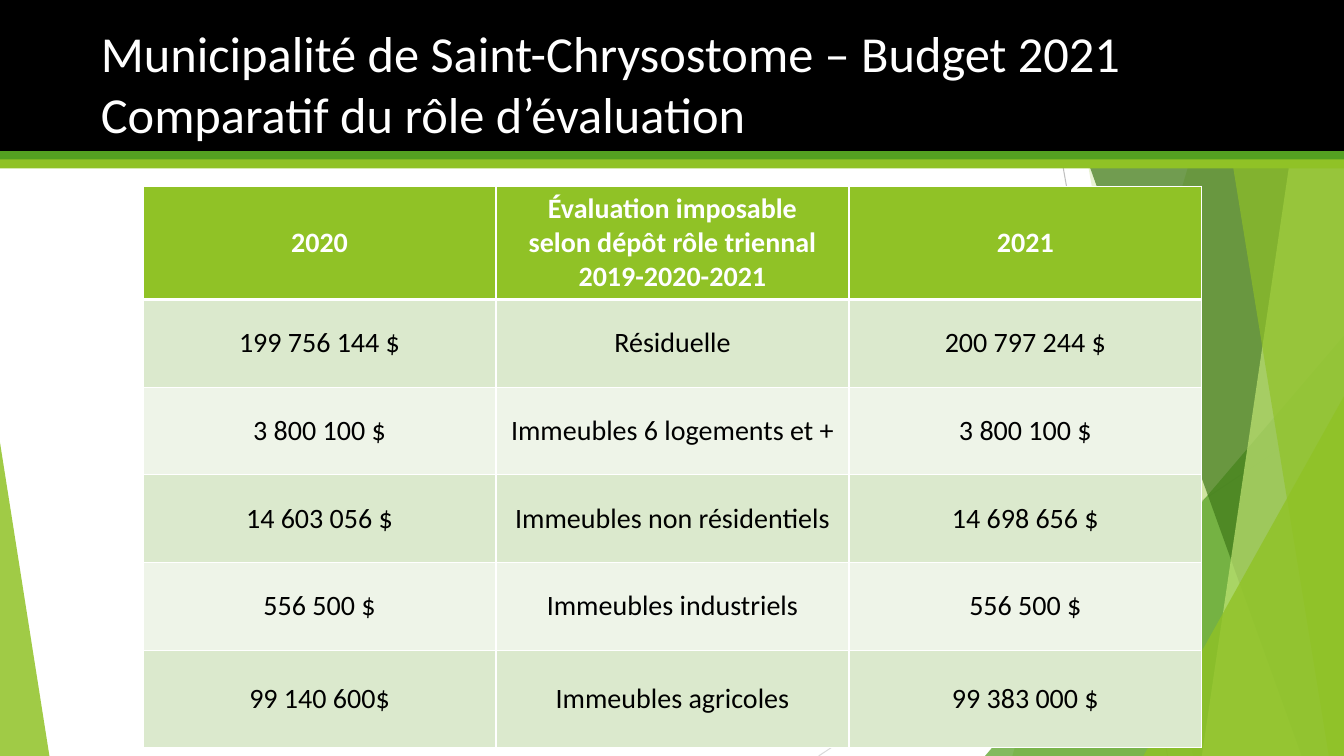
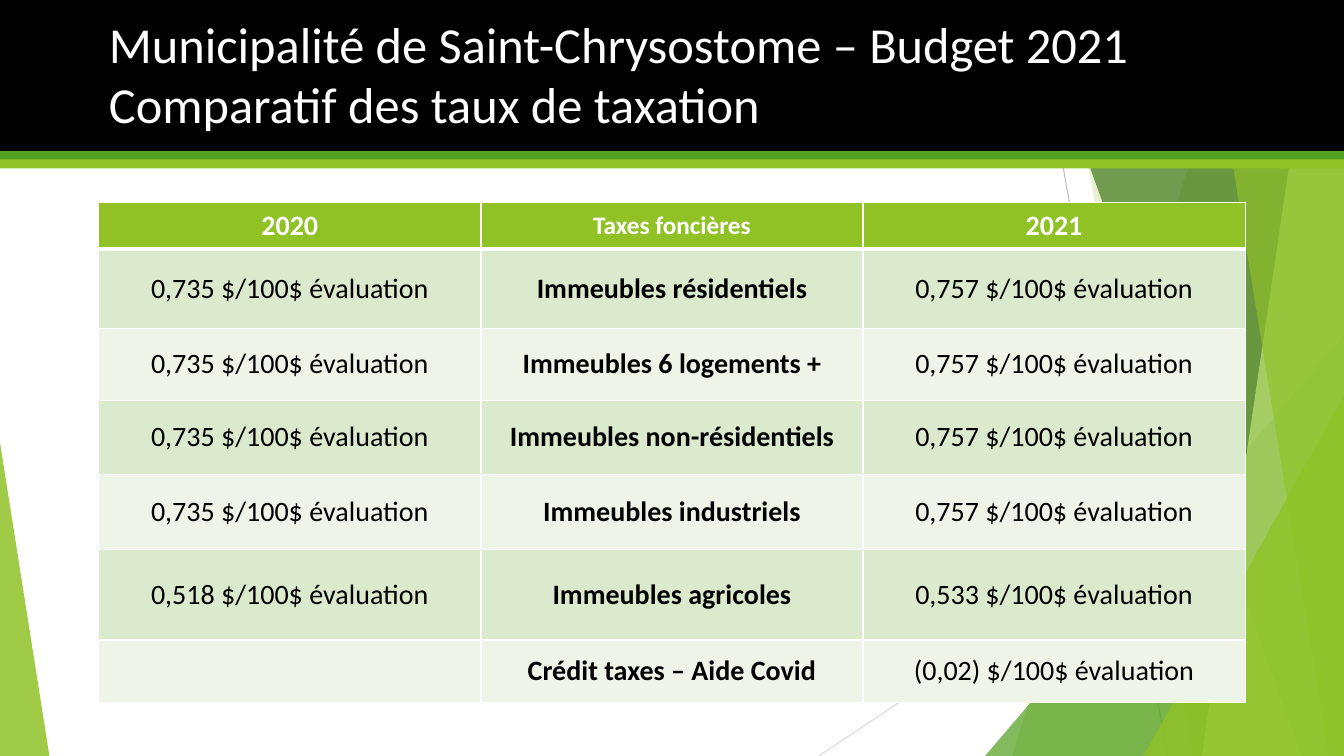
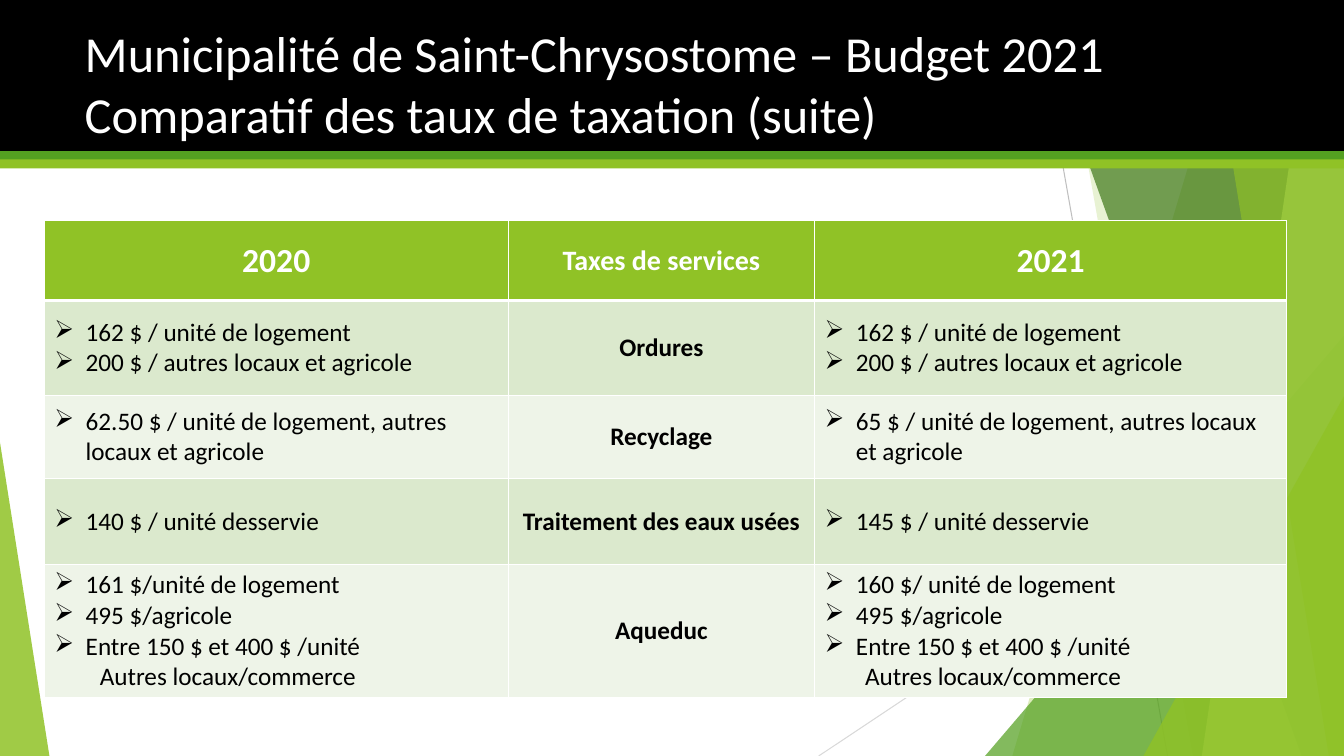
from lxml.etree import SubElement
from pptx import Presentation
from pptx.dml.color import RGBColor
from pptx.enum.shapes import MSO_CONNECTOR as Connector, MSO_SHAPE as Preset
from pptx.enum.text import MSO_ANCHOR as Anchor, MSO_AUTO_SIZE as AutoSize, PP_ALIGN as Align
from pptx.oxml.ns import qn
from pptx.util import Inches, Pt

WIDTH, HEIGHT = 13.33, 7.5
BLACK, WHITE = "000000", "FFFFFF"
LIME, GREEN, FOREST, PALE = "90C226", "54A021", "3F7819", "C0E474"
BANDS = ("EEF4E8", "DBE9CD")
TOWN = "Municipalité de Saint-Chrysostome – Budget 2021"


def color(code):
    return RGBColor.from_string(code)


class Deck:
    font = "Calibri"
    title_size = 36
    bullet_indent = 0.31

    def __init__(self):
        self.deck = Presentation()
        self.deck.slide_width, self.deck.slide_height = Inches(WIDTH), Inches(HEIGHT)
        self.layout = self.deck.slide_layouts[5]
        for holder in list(self.layout.placeholders)[1:]:
            holder.element.getparent().remove(holder.element)
        self.page = None

    def add_page(self):
        self.page = self.deck.slides.add_slide(self.layout)
        if len(self.deck.slides) == 1:
            self.backdrop()

    def paint(self, shape, fill, opacity=100):
        shape.shadow.inherit = False
        shape.fill.solid()
        shape.fill.fore_color.rgb = color(fill)
        if opacity < 100:
            tint = shape.element.spPr.find(".//" + qn("a:srgbClr"))
            SubElement(tint, qn("a:alpha")).set("val", str(opacity * 1000))
        shape.line.fill.background()

    def line(self, start, end, tone):
        points = [Inches(value) for value in (*start, *end)]
        link = self.page.shapes.add_connector(Connector.STRAIGHT, *points)
        link.line.color.rgb = color(tone)
        link.line.width = Pt(0.75)
        SubElement(link.element.spPr, qn("a:effectLst"))

    def shard(self, top_left, bottom_left, fill, opacity):
        corners = [(top_left, -0.01), (WIDTH, -0.01), (WIDTH, HEIGHT), (bottom_left, HEIGHT)]
        points = [(Inches(x), Inches(y)) for x, y in corners]
        builder = self.page.shapes.build_freeform(*points[0])
        builder.add_line_segments(points[1:], close=True)
        self.paint(builder.convert_to_shape(), fill, opacity)

    def triangle(self, left, top, width, peak, fill, opacity):
        area = [Inches(value) for value in (left, top, width, HEIGHT - top)]
        shape = self.page.shapes.add_shape(Preset.ISOSCELES_TRIANGLE, *area)
        shape.adjustments[0] = peak
        self.paint(shape, fill, opacity)

    def band(self, top, height, fill):
        area = [Inches(value) for value in (0, top, WIDTH, height)]
        self.paint(self.page.shapes.add_shape(Preset.RECTANGLE, *area), fill)

    def backdrop(self):
        self.line((10.25, 0), (11.58, HEIGHT), "BFBFBF")
        self.line((WIDTH, 4.03), (8.12, HEIGHT), "D9D9D9")
        self.shard(12.28, 10.04, LIME, 30)
        self.shard(10.5, 11.83, LIME, 20)
        self.triangle(9.77, 3.33, 3.56, 1, GREEN, 72)
        self.shard(10.21, 12.91, FOREST, 70)
        self.shard(13.03, 11.92, PALE, 70)
        self.shard(11.96, 13.18, LIME, 65)
        self.triangle(11.34, 3.93, 1.99, 1, LIME, 80)
        self.triangle(0, 4.39, 0.49, 0, LIME, 85)
        self.band(0, 1.5, BLACK)
        self.band(1.5, 0.09, GREEN)
        self.band(1.58, 0.09, LIME)
        layout_title = self.layout.placeholders[0].element
        for shape in list(self.page.shapes):
            if not shape.is_placeholder:
                layout_title.addprevious(shape.element)

    def add_text(self, para, text, size, tone, bold=False):
        span = para.add_run()
        span.text = text
        span.font.name = self.font
        span.font.size = Pt(size)
        span.font.bold = bold
        span.font.color.rgb = color(tone)

    def title(self, left, top, width, *lines):
        box = self.page.shapes.title
        box.left, box.top = Inches(left), Inches(top)
        box.width, box.height = Inches(width), Inches(1.44)
        frame = box.text_frame
        frame.word_wrap = True
        frame.auto_size = AutoSize.NONE
        frame.vertical_anchor = Anchor.TOP
        para = frame.paragraphs[0]
        para.alignment = Align.LEFT
        for number, text in enumerate(lines):
            if number:
                para.add_line_break()
            self.add_text(para, text, self.title_size, WHITE)

    def indent(self, para, left, bullet=False):
        props = para._p.get_or_add_pPr()
        props.set("marL", str(Inches(left)))
        props.set("indent", str(-Inches(left) if bullet else 0))
        if bullet:
            SubElement(props, qn("a:buChar")).set("char", "➢")

    def borders(self, cell, top, bottom):
        props = cell._tc.get_or_add_tcPr()
        for side, width in (("L", 1), ("R", 1), ("T", top), ("B", bottom)):
            edge = SubElement(props, qn("a:ln" + side), w=str(Pt(width)))
            fill = SubElement(edge, qn("a:solidFill"))
            SubElement(fill, qn("a:srgbClr")).set("val", WHITE)

    def fill_cell(self, cell, content, size, tone, bold):
        bulleted = isinstance(content, list)
        items = content if bulleted else content.split("\n")
        frame = cell.text_frame
        for number, item in enumerate(items):
            para = frame.add_paragraph() if number else frame.paragraphs[0]
            para.alignment = Align.LEFT if bulleted else Align.CENTER
            if isinstance(item, tuple):
                item, left = item
                self.indent(para, left)
            elif bulleted:
                self.indent(para, self.bullet_indent, bullet=True)
            if item:
                self.add_text(para, item, size, tone, bold)

    def table(self, left, top, widths, heights, rows, head_sizes, size, bold_middle=True):
        area = [Inches(value) for value in (left, top, sum(widths), sum(heights))]
        grid = self.page.shapes.add_table(len(rows), len(widths), *area).table
        for column, width in zip(grid.columns, widths):
            column.width = Inches(width)
        for row, height in zip(grid.rows, heights):
            row.height = Inches(height)
        for r, row in enumerate(rows):
            head = r == 0
            for c, content in enumerate(row):
                cell = grid.cell(r, c)
                self.borders(cell, 3 if r == 1 else 1, 3 if head else 1)
                cell.fill.solid()
                cell.fill.fore_color.rgb = color(LIME if head else BANDS[r % 2])
                cell.vertical_anchor = Anchor.MIDDLE
                self.fill_cell(cell, content, head_sizes[c] if head else size,
                               WHITE if head else BLACK, head or (bold_middle and c == 1))


def assessment(deck):
    deck.add_page()
    deck.title(0.9, 0.17, 11.18, TOWN, "Comparatif du rôle d’évaluation")
    rows = [
        ("2020", "Évaluation imposable\nselon dépôt rôle triennal\n2019-2020-2021", "2021"),
        ("199 756 144 $", "Résiduelle", "200 797 244 $"),
        ("3 800 100 $", "Immeubles 6 logements et +", "3 800 100 $"),
        ("14 603 056 $", "Immeubles non résidentiels", "14 698 656 $"),
        ("556 500 $", "Immeubles industriels", "556 500 $"),
        ("99 140 600$", "Immeubles agricoles", "99 383 000 $"),
    ]
    deck.table(1.42, 1.85, [3.5] * 3, [0.97] + [0.87] * 4 + [0.97], rows,
               (20, 20, 20), 20, bold_middle=False)


def property_rates(deck):
    deck.add_page()
    deck.title(0.98, 0.08, 11.18, TOWN + " Comparatif des taux de taxation")
    unit = " $/100$ évaluation"
    rates = [
        ("0,735", "Immeubles résidentiels", "0,757"),
        ("0,735", "Immeubles 6 logements +", "0,757"),
        ("0,735", "Immeubles non-résidentiels", "0,757"),
        ("0,735", "Immeubles industriels", "0,757"),
        ("0,518", "Immeubles agricoles", "0,533"),
        ("", "Crédit taxes – Aide Covid", "(0,02)"),
    ]
    rows = [("2020", "Taxes foncières", "2021")]
    rows += [(old and old + unit, label, new + unit) for old, label, new in rates]
    deck.table(0.98, 2.01, [3.79] * 3, [0.46, 0.79, 0.71, 0.74, 0.74, 0.9, 0.62], rows,
               (20, 18, 20), 20)


def service_rates(deck):
    deck.add_page()
    deck.title(0.74, 0.17, 11.49, TOWN + " Comparatif des taux de taxation (suite)")
    waste = ["162 $ / unité de logement", "200 $ / autres locaux et agricole"]
    water = ["495 $/agricole", "Entre 150 $ et 400 $ /unité"]
    others = "Autres locaux/commerce"
    rows = [
        ("2020", "Taxes de services", "2021"),
        (waste, "Ordures", waste),
        (["62.50 $ / unité de logement, autres locaux et agricole"], "Recyclage",
         ["65 $ / unité de logement, autres locaux et agricole"]),
        (["140 $ / unité desservie"], "Traitement des eaux usées", ["145 $ / unité desservie"]),
        (["161 $/unité de logement", *water, (others, 0.45)], "Aqueduc",
         ["160 $/ unité de logement", *water, (others, 0.4)]),
    ]
    deck.table(0.44, 2.19, [4.6, 3.04, 4.68], [0.79, 0.94, 0.83, 0.85, 1.18], rows,
               (24, 20, 24), 18)


def main():
    deck = Deck()
    assessment(deck)
    property_rates(deck)
    service_rates(deck)
    deck.deck.save("out.pptx")


if __name__ == "__main__":
    main()
